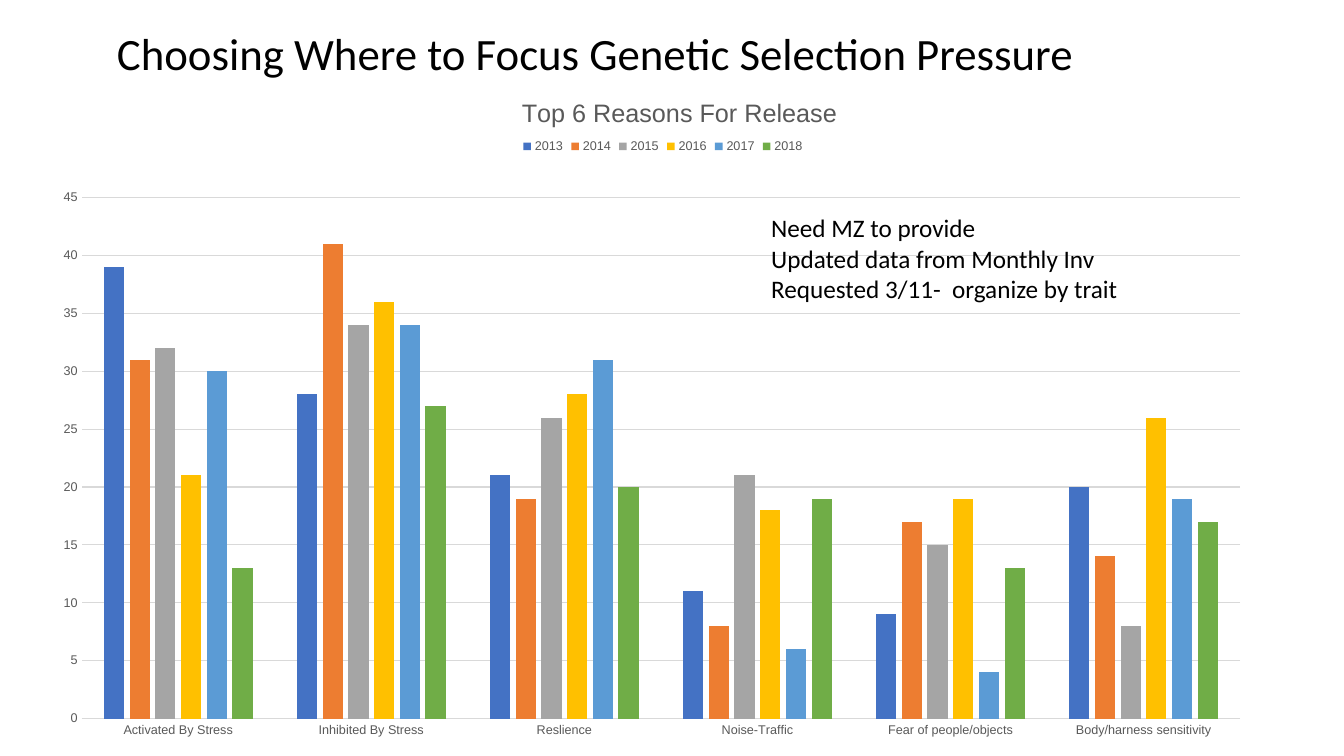
"""Build the slide on the top six reasons for release, 2013 to 2018."""
from lxml.etree import SubElement
from pptx import Presentation
from pptx.chart.data import CategoryChartData
from pptx.dml.color import RGBColor
from pptx.enum.chart import XL_CHART_TYPE as ChartType
from pptx.enum.chart import XL_LEGEND_POSITION as LegendPosition
from pptx.enum.chart import XL_TICK_MARK as TickMark
from pptx.enum.text import MSO_ANCHOR as Anchor
from pptx.enum.text import MSO_AUTO_SIZE as AutoSize
from pptx.enum.text import PP_ALIGN as Align
from pptx.oxml.ns import qn
from pptx.util import Inches, Pt


def style_font(font, size, color, name="Arial"):
    font.size, font.name, font.bold = Pt(size), name, False
    font.color.rgb = RGBColor.from_string(color)


def write(frame, text, **style):
    frame.text = text
    for paragraph in frame.paragraphs:
        for run in paragraph.runs:
            style_font(run.font, **style)


GREY, PALE, BLACK = "595959", "D9D9D9", "000000"
CHART_WIDTH, CHART_HEIGHT = 12.16, 6.54
reasons = ["Activated By Stress", "Inhibited By Stress", "Reslience",
           "Noise-Traffic", "Fear of people/objects", "Body/harness sensitivity"]
years = {
    "2013": ("4472C4", [39, 28, 21, 11, 9, 20]),
    "2014": ("ED7D31", [31, 41, 19, 8, 17, 14]),
    "2015": ("A5A5A5", [32, 34, 26, 21, 15, 8]),
    "2016": ("FFC000", [21, 36, 28, 18, 19, 26]),
    "2017": ("5B9BD5", [30, 34, 31, 6, 4, 19]),
    "2018": ("70AD47", [13, 27, 20, 19, 13, 17]),
}

deck = Presentation()
deck.slide_width, deck.slide_height = Inches(13.33), Inches(7.5)
slide = deck.slides.add_slide(deck.slide_layouts[5])

release_data = CategoryChartData()
release_data.categories = reasons
for year, (color, releases) in years.items():
    release_data.add_series(year, releases)
chart = slide.shapes.add_chart(
    ChartType.COLUMN_CLUSTERED, Inches(0.39), Inches(0.89),
    Inches(CHART_WIDTH), Inches(CHART_HEIGHT), release_data).chart
style_font(chart.font, 10, BLACK)
write(chart.chart_title.text_frame, "Top 6 Reasons For Release", size=18, color=GREY)
chart.chart_title.include_in_layout = False

chart.has_legend = True
legend = chart.legend
legend.position = LegendPosition.TOP
legend.include_in_layout = False
style_font(legend.font, 9, GREY)

columns = chart.plots[0]
columns.gap_width, columns.overlap = 219, -27
columns.vary_by_categories = False
for series, (color, releases) in zip(columns.series, years.values()):
    series.format.fill.solid()
    series.format.fill.fore_color.rgb = RGBColor.from_string(color)

reason_axis, release_axis = chart.category_axis, chart.value_axis
for axis in (reason_axis, release_axis):
    axis.major_tick_mark = axis.minor_tick_mark = TickMark.NONE
    style_font(axis.tick_labels.font, 9, GREY)
release_axis.minimum_scale, release_axis.maximum_scale = 0, 45
release_axis.major_unit = 5
release_axis.tick_labels.number_format = "0"
release_axis.tick_labels.number_format_is_linked = False
release_axis.format.line.fill.background()
for line in (reason_axis.format.line, release_axis.major_gridlines.format.line):
    line.color.rgb = RGBColor.from_string(PALE)
    line.width = Pt(0.75)

chart_xml = chart.element.find(qn("c:chart"))
edges = {"xMode": "edge", "yMode": "edge"}
placements = [
    ("c:title", 1, edges, {"x": 4.74, "y": 0.02}),
    ("c:legend", 1, edges, {"x": 4.76, "y": 0.45}),
    ("c:plotArea", 0, {"layoutTarget": "inner", **edges},
     {"x": 0.42, "y": 1.07, "w": 11.49, "h": 5.17}),
]
for part, index, modes, lengths in placements:
    part_xml = chart_xml.find(qn(part))
    for automatic in part_xml.findall(qn("c:layout")):
        part_xml.remove(automatic)
    layout = SubElement(part_xml, qn("c:layout"))
    manual = SubElement(layout, qn("c:manualLayout"))
    shares = {side: length / (CHART_WIDTH if side in "xw" else CHART_HEIGHT)
              for side, length in lengths.items()}
    for setting, value in {**modes, **shares}.items():
        SubElement(manual, qn(f"c:{setting}")).set("val", str(value))
    part_xml.insert(index, layout)

title = slide.shapes.title
title.left, title.top = Inches(1.06), Inches(0.23)
title.width, title.height = Inches(12.03), Inches(0.66)
write(title.text_frame, "Choosing Where to Focus Genetic Selection Pressure",
      size=32, color=BLACK, name="Calibri")
title.text_frame.vertical_anchor = Anchor.MIDDLE
title.text_frame.auto_size = AutoSize.NONE
heading = title.text_frame.paragraphs[0]
heading.alignment, heading.line_spacing = Align.LEFT, 0.9

note = slide.shapes.add_textbox(
    Inches(7.55), Inches(2.06), Inches(3.68), Inches(1.01)).text_frame
note.word_wrap = True
note.auto_size = AutoSize.SHAPE_TO_FIT_TEXT
write(note, "Need MZ to provide\nUpdated data from Monthly Inv\n"
      "Requested 3/11-  organize by trait", size=18, color=BLACK, name="Calibri")

deck.save("out.pptx")
